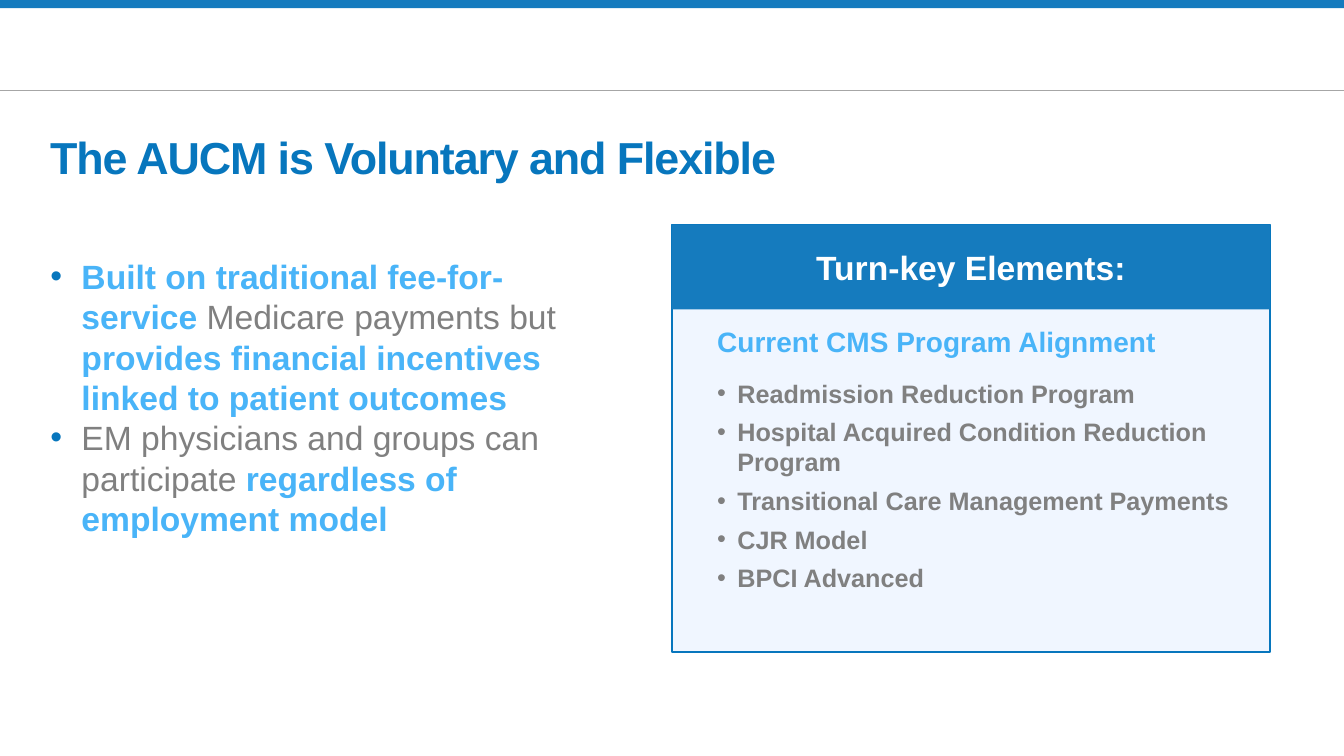
from lxml import etree
from pptx import Presentation
from pptx.dml.color import RGBColor
from pptx.enum.shapes import MSO_CONNECTOR, MSO_SHAPE
from pptx.enum.text import MSO_ANCHOR, MSO_AUTO_SIZE, PP_ALIGN
from pptx.oxml.ns import qn
from pptx.util import Inches, Pt

RECTANGLE = MSO_SHAPE.RECTANGLE
STRAIGHT = MSO_CONNECTOR.STRAIGHT
MIDDLE = MSO_ANCHOR.MIDDLE
CENTER = PP_ALIGN.CENTER
FIT_SHAPE = MSO_AUTO_SIZE.SHAPE_TO_FIT_TEXT

BLUE = RGBColor(0x15, 0x7B, 0xBE)
DEEP_BLUE = RGBColor(0x07, 0x76, 0xBD)
SKY = RGBColor(0x49, 0xB4, 0xF8)
PALE = RGBColor(0xF0, 0xF6, 0xFF)
GRAY = RGBColor(0x80, 0x80, 0x80)
RULE_GRAY = RGBColor(0xA6, 0xA6, 0xA6)
WHITE = RGBColor(0xFF, 0xFF, 0xFF)

TITLE = "The AUCM is Voluntary and Flexible"
# Each point is a list of (text, emphasised) pieces.
POINTS = [
    [("Built on traditional fee-for-service ", True),
     ("Medicare payments but", False),
     (" provides financial incentives linked to patient outcomes", True)],
    [("EM physicians and groups can participate ", False),
     ("regardless of employment model", True)],
]
PANEL_TITLE = "Turn-key Elements:"
PANEL_SUBTITLE = "Current CMS Program Alignment"
PROGRAMS = [
    "Readmission Reduction Program",
    "Hospital Acquired Condition Reduction Program",
    "Transitional Care Management Payments",
    "CJR Model",
    "BPCI Advanced",
]

WIDTH, HEIGHT = 13.33, 7.5
MARGIN = 0.4
PANEL_LEFT, PANEL_TOP = WIDTH / 2, 2.23
PANEL_WIDTH, PANEL_HEIGHT, HEADER_HEIGHT = 5.93, 4.24, 0.84
PANEL_TEXT_LEFT = PANEL_LEFT + 0.35


def add_rectangle(page, left, top, width, height, fill, line=None):
    shape = page.shapes.add_shape(
        RECTANGLE, *map(Inches, (left, top, width, height)))
    shape.shadow.inherit = False
    shape.fill.solid()
    shape.fill.fore_color.rgb = fill
    if line is None:
        shape.line.fill.background()
    else:
        shape.line.color.rgb = line
        shape.line.width = Pt(1)
    return shape


def add_frame(page, left, top, width, height, wrap=True):
    box = page.shapes.add_textbox(*map(Inches, (left, top, width, height)))
    box.text_frame.word_wrap = wrap
    return box.text_frame


def set_font(font, size, color, bold=None):
    font.name = "Arial"
    font.size = Pt(size)
    font.color.rgb = color
    font.bold = bold


def add_paragraphs(frame, count):
    return [frame.paragraphs[0]] + [frame.add_paragraph() for _ in range(count - 1)]


def add_bullet(para, indent, color=None):
    properties = para._p.get_or_add_pPr()
    properties.set("marL", str(Inches(indent)))
    properties.set("indent", str(-Inches(indent)))
    if color is not None:
        bullet_color = etree.SubElement(properties, qn("a:buClr"))
        etree.SubElement(bullet_color, qn("a:srgbClr"), val=str(color))
    etree.SubElement(properties, qn("a:buFont"), typeface="Arial")
    etree.SubElement(properties, qn("a:buChar"), char="•")


def add_title_area(page):
    rule = page.shapes.add_connector(
        STRAIGHT, 0, Inches(0.9), Inches(WIDTH), Inches(0.9))
    rule.line.color.rgb = RULE_GRAY
    rule.line.width = Pt(0.5)
    etree.SubElement(rule._element.spPr, qn("a:effectLst"))
    add_rectangle(page, 0, 0, WIDTH, 0.08, BLUE)

    frame = add_frame(page, MARGIN, 1.22, 12.34, 0.74)
    frame.vertical_anchor = MIDDLE
    para = frame.paragraphs[0]
    para.line_spacing = 0.9
    span = para.add_run()
    span.text = TITLE
    set_font(span.font, 32, DEEP_BLUE, True)
    span.font._element.set("spc", "-80")


def add_points(page):
    frame = add_frame(page, MARGIN, 2.49, 5.75, 3.33)
    frame.auto_size = FIT_SHAPE
    for para, pieces in zip(add_paragraphs(frame, len(POINTS)), POINTS):
        add_bullet(para, 0.31, DEEP_BLUE)
        for text, emphasised in pieces:
            span = para.add_run()
            span.text = text
            set_font(span.font, 24, SKY if emphasised else GRAY, emphasised)


def add_panel(page):
    add_rectangle(page, PANEL_LEFT, PANEL_TOP, PANEL_WIDTH, PANEL_HEIGHT,
                  PALE, DEEP_BLUE)
    header = add_rectangle(page, PANEL_LEFT, PANEL_TOP, PANEL_WIDTH,
                           HEADER_HEIGHT, BLUE)
    header.text_frame.vertical_anchor = MIDDLE
    para = header.text_frame.paragraphs[0]
    para.text = PANEL_TITLE
    para.alignment = CENTER
    set_font(para.font, 24, WHITE, True)

    subtitle = add_frame(page, PANEL_TEXT_LEFT, 3.17, 4.58, 0.44, wrap=False)
    subtitle.auto_size = FIT_SHAPE
    para = subtitle.paragraphs[0]
    para.text = PANEL_SUBTITLE
    set_font(para.font, 20, SKY, True)

    frame = add_frame(page, PANEL_TEXT_LEFT, 3.7, 5.72, 2.26)
    frame.auto_size = FIT_SHAPE
    for index, para in enumerate(add_paragraphs(frame, len(PROGRAMS))):
        para.text = PROGRAMS[index]
        add_bullet(para, 0.2)
        if index:
            para.space_before = Pt(6)
        set_font(para.font, 18, GRAY, True)


def main():
    deck = Presentation()
    deck.slide_width, deck.slide_height = Inches(WIDTH), Inches(HEIGHT)
    page = deck.slides.add_slide(deck.slide_layouts[6])
    add_title_area(page)
    add_panel(page)
    add_points(page)
    deck.save("out.pptx")


if __name__ == "__main__":
    main()
